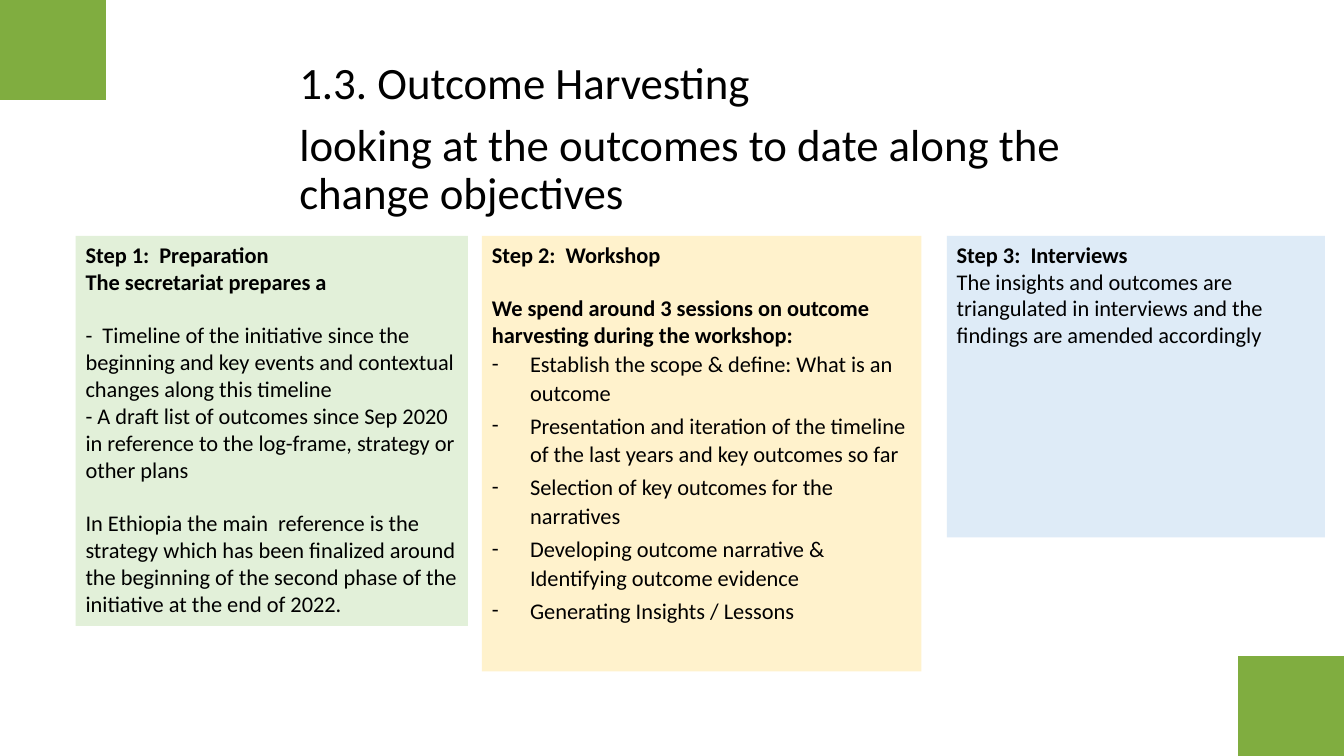
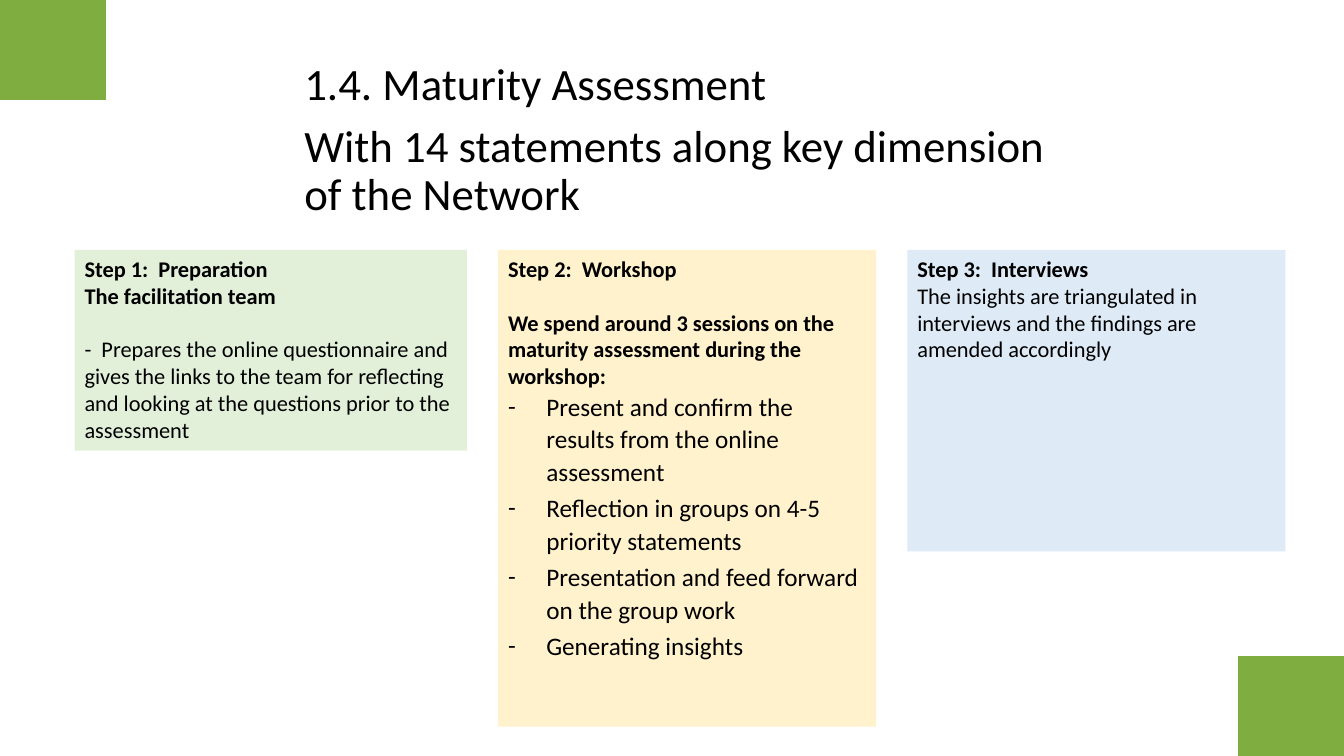
from lxml import etree
from pptx import Presentation
from pptx.dml.color import RGBColor
from pptx.enum.shapes import MSO_SHAPE
from pptx.enum.text import MSO_ANCHOR, PP_ALIGN
from pptx.oxml.ns import qn
from pptx.util import Inches, Pt

RECT = MSO_SHAPE.RECTANGLE
TOP = MSO_ANCHOR.TOP
LEFT = PP_ALIGN.LEFT

FONT = "Calibri"
COLORS = {
    "corner": "80AD40",
    "text": "000000",
    "preparation": "E2F0D9",
    "workshop": "FFF2CC",
    "interviews": "DEEBF7",
}
SLIDE_W, SLIDE_H = 13.33, 7.5
CORNER_W, CORNER_H = 1.05, 0.99
TITLE_H = 0.76
TITLE_SIZE, BODY_SIZE = 32, 16
BLANK_LINE = 19.2
INDENT = 0.38

SLIDES = [
    {
        "title": ["1.3. Outcome Harvesting",
                  "looking at the outcomes to date along the change objectives"],
        "title_box": (2.87, 0.55, 8.03),
        "steps_top": 2.34,
        "bullet_size": 16,
        "steps": [
            ("preparation", (0.75, 3.89, 3.87), [
                ("bold", "Step 1:  Preparation"),
                ("bold", "The secretariat prepares a"),
                ("gap", "-  Timeline of the initiative since the beginning and key "
                        "events and contextual changes along this timeline"),
                ("plain", "- A draft list of outcomes since Sep 2020 in reference to "
                          "the log-frame, strategy or other plans"),
                ("gap", "In Ethiopia the main  reference is the strategy which has "
                        "been finalized around the beginning of the second phase of "
                        "the initiative at the end of 2022."),
            ]),
            ("workshop", (4.78, 4.36, 4.32), [
                ("bold", "Step 2:  Workshop"),
                ("bold gap", "We spend around 3 sessions on outcome harvesting during "
                             "the workshop:"),
                ("bullet", "Establish the scope & define: What is an outcome"),
                ("bullet", "Presentation and iteration of the timeline of the last "
                           "years and key outcomes so far"),
                ("bullet", "Selection of key outcomes for the narratives"),
                ("bullet", "Developing outcome narrative & Identifying outcome evidence"),
                ("bullet", "Generating Insights / Lessons"),
            ]),
            ("interviews", (9.39, 3.75, 2.99), [
                ("bold", "Step 3:  Interviews"),
                ("plain", "The insights and outcomes are triangulated in interviews "
                          "and the findings are amended accordingly"),
            ]),
        ],
    },
    {
        "title": ["1.4. Maturity Assessment",
                  "With 14 statements along key dimension of the Network"],
        "title_box": (2.92, 0.56, 7.93),
        "steps_top": 2.48,
        "bullet_size": 18,
        "steps": [
            ("preparation", (0.74, 3.89, 1.99), [
                ("bold", "Step 1:  Preparation"),
                ("bold", "The facilitation team"),
                ("gap", "-  Prepares the online questionnaire and gives the links to "
                        "the team for reflecting and looking at the questions prior "
                        "to the assessment"),
            ]),
            ("workshop", (4.94, 3.75, 4.73), [
                ("bold", "Step 2:  Workshop"),
                ("bold gap", "We spend around 3 sessions on the maturity assessment "
                             "during the workshop:"),
                ("bullet", "Present and confirm the results from the online assessment"),
                ("bullet", "Reflection in groups on 4-5 priority statements"),
                ("bullet", "Presentation and feed forward on the group work"),
                ("bullet", "Generating insights"),
            ]),
            ("interviews", (9, 3.75, 2.99), [
                ("bold", "Step 3:  Interviews"),
                ("plain", "The insights are triangulated in interviews and the "
                          "findings are amended accordingly"),
            ]),
        ],
    },
]


def add_rect(slide, left, top, width, height, color):
    sp = slide.shapes.add_shape(RECT, Inches(left), Inches(top),
                                Inches(width), Inches(height))
    sp.shadow.inherit = False
    sp.fill.solid()
    sp.fill.fore_color.rgb = RGBColor.from_string(COLORS[color])
    sp.line.fill.background()
    return sp


def add_paragraph(tf, index, text, size, bold=False):
    p = tf.paragraphs[0] if index == 0 else tf.add_paragraph()
    p.text = text
    p.alignment = LEFT
    for r in p.runs:
        r.font.name = FONT
        r.font.size = Pt(size)
        r.font.bold = bold
        r.font.color.rgb = RGBColor.from_string(COLORS["text"])
    return p


def set_bullet(p):
    pPr = p._p.get_or_add_pPr()
    pPr.set("marL", str(Inches(INDENT)))
    pPr.set("indent", str(-Inches(INDENT)))
    etree.SubElement(pPr, qn("a:buFont")).set("typeface", FONT)
    etree.SubElement(pPr, qn("a:buChar")).set("char", "-")
    p.line_spacing = 1.07
    p.space_after = Pt(3)


def add_corners(slide):
    for left, top in ((0, 0), (SLIDE_W - CORNER_W, SLIDE_H - CORNER_H)):
        add_rect(slide, left, top, CORNER_W, CORNER_H, "corner")


def add_title(slide, lines, left, top, width):
    sp = slide.shapes.add_textbox(Inches(left), Inches(top),
                                  Inches(width), Inches(TITLE_H))
    tf = sp.text_frame
    tf.word_wrap = True
    for i, line in enumerate(lines):
        p = add_paragraph(tf, i, line, TITLE_SIZE)
        p.line_spacing = 0.9
        if i:
            p.space_before = Pt(10)


def add_step(slide, color, left, top, width, height, items, bullet_size):
    tf = add_rect(slide, left, top, width, height, color).text_frame
    tf.word_wrap = True
    tf.vertical_anchor = TOP
    for i, (style, text) in enumerate(items):
        size = bullet_size if style == "bullet" else BODY_SIZE
        p = add_paragraph(tf, i, text, size, "bold" in style)
        if "gap" in style:
            p.space_before = Pt(BLANK_LINE)
        if style == "bullet":
            set_bullet(p)


def main():
    prs = Presentation()
    prs.slide_width = Inches(SLIDE_W)
    prs.slide_height = Inches(SLIDE_H)
    for content in SLIDES:
        slide = prs.slides.add_slide(prs.slide_layouts[6])
        add_corners(slide)
        add_title(slide, content["title"], *content["title_box"])
        for color, (left, width, height), items in content["steps"]:
            add_step(slide, color, left, content["steps_top"], width, height,
                     items, content["bullet_size"])
    prs.save("out.pptx")


if __name__ == "__main__":
    main()
